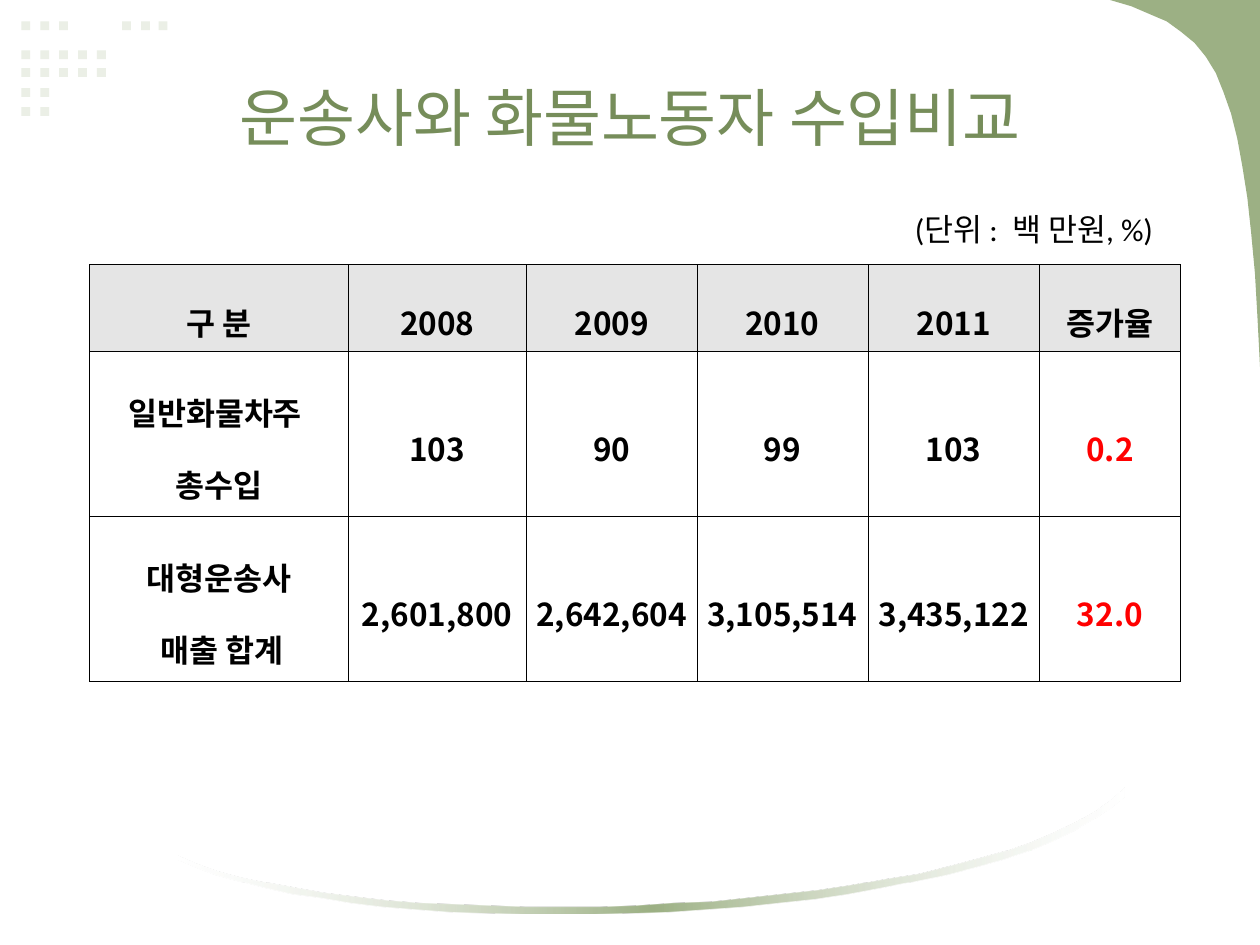
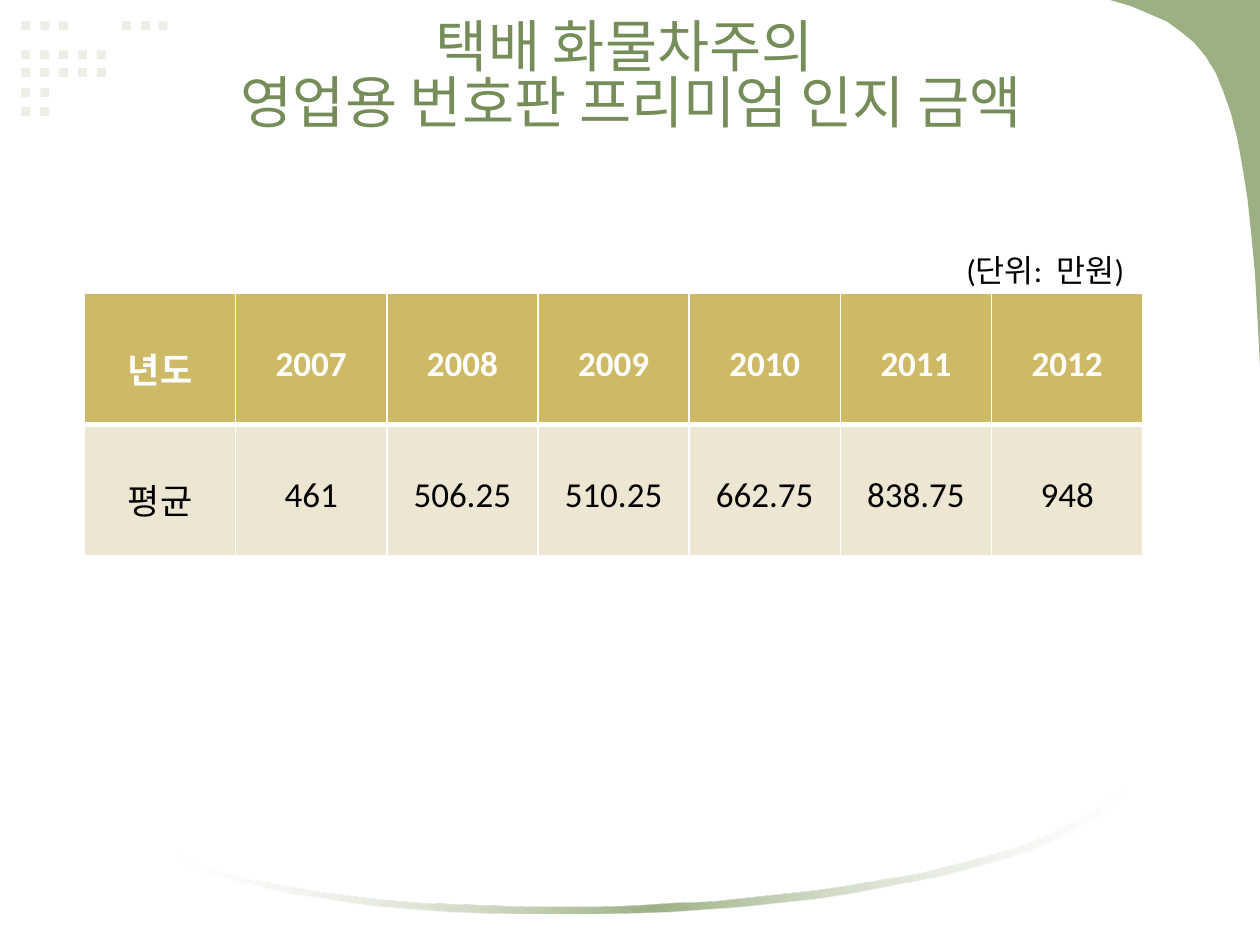
import pptx
import pptx.util
import pptx.dml.color
import pptx.enum.shapes
import pptx.enum.text
import pptx.oxml
import pptx.oxml.ns
import lxml.etree

# ---- Content ----
INCOME = {
    "title": ["운송사와 화물노동자 수입비교"],
    "title_box": (50, 30, 900, 125),
    "title_size": 36,
    "unit": "(단위 :  백 만원, %)",
    "unit_box": (642, 162, 283, 71),
    "table_at": (71, 210),
    "columns": [205, 142, 135, 136, 136, 112],
    "heights": [69, 131, 131],
    "rows": [
        ["구 분", "2008", "2009", "2010", "2011", "증가율"],
        ["일반화물차주 \n총수입", "103", "90", "99", "103", "0.2"],
        ["대형운송사\n 매출 합계", "2,601,800", "2,642,604", "3,105,514", "3,435,122", "32.0"],
    ],
}
PREMIUM = {
    "title": ["택배 화물차주의 ", "영업용 번호판 프리미엄 인지 금액"],
    "title_box": (51, 0, 900, 125),
    "title_size": 32.4,
    "unit": "(단위:  만원)",
    "unit_box": (626, 194, 276, 40),
    "table_at": (67, 233),
    "columns": [120] * 7,
    "heights": [104] * 2,
    "rows": [
        ["년도", "2007", "2008", "2009", "2010", "2011", "2012"],
        ["평균", "461", "506.25", "510.25", "662.75", "838.75", "948"],
    ],
}

# ---- Shared style ----
PX = 9144  # 100 px to the inch
HANGUL, LATIN = "Noto Sans CJK KR", "Calibri"
BLACK, WHITE, RED = "000000", "FFFFFF", "FF0000"
GREEN, TITLE_GREEN, PALE_GREEN = "9CB084", "768D5A", "EBEFE6"
GREY, GOLD, CREAM = "E5E5E5", "CEB966", "EDE6D3"

# ---- Background geometry ----
DOT = 7
DOT_COLUMNS = [17, 32, 47, 62, 77]
DOT_ROWS = {
    17: DOT_COLUMNS[:3] + [97, 112, 126],
    40: DOT_COLUMNS,
    54: DOT_COLUMNS,
    70: DOT_COLUMNS[:2],
    85: DOT_COLUMNS[:2],
}
CORNER = [
    (881, 0), (1000, 0), (1000, 291), (998, 252), (996, 217), (993, 185), (990, 157),
    (986, 132), (982, 110), (977, 90), (971, 73), (965, 58), (957, 45), (948, 34),
    (937, 25), (926, 17), (912, 11), (898, 5),
]
SWOOSH = [
    (892, 625), (892, 632), (881, 641), (867, 650), (852, 659), (835, 667), (816, 675),
    (795, 682), (773, 688), (750, 694), (725, 699), (700, 704), (673, 709), (646, 713),
    (617, 716), (589, 719), (560, 721), (531, 723), (501, 724), (472, 725), (443, 725),
    (414, 725), (385, 724), (357, 723), (330, 721), (304, 719), (279, 716), (255, 712),
    (232, 709), (210, 704), (191, 699), (172, 694), (156, 688), (142, 682), (142, 679),
    (156, 685), (173, 691), (192, 696), (212, 700), (234, 704), (257, 708), (281, 711),
    (307, 714), (333, 716), (361, 717), (389, 718), (417, 719), (446, 719), (476, 719),
    (505, 718), (534, 716), (564, 715), (593, 712), (621, 709), (649, 706), (676, 702),
    (703, 697), (729, 693), (753, 687), (776, 681), (798, 675), (818, 668), (837, 660),
    (854, 652), (868, 644), (881, 635),
]
SWOOSH_STOPS = [(0, WHITE, 30), (50, GREEN, 100), (100, WHITE, 30)]  # position, colour, opacity


def px(*lengths):
    return [pptx.util.Emu(length * PX) for length in lengths]


def rgb(color):
    return pptx.dml.color.RGBColor.from_string(color)


def parse_xml(text):
    return pptx.oxml.parse_xml(text.replace(" ", f" {pptx.oxml.ns.nsdecls('a')} ", 1))


def style(paragraph, font_name, size, color, align, bold=False):
    alignment = pptx.enum.text.PP_ALIGN
    paragraph.alignment = getattr(alignment, align)
    font = paragraph.font
    font.name, font.size, font.bold = font_name, pptx.util.Pt(size), bold
    font.color.rgb = rgb(color)
    if font_name == HANGUL:
        properties = paragraph._p.pPr.find(pptx.oxml.ns.qn("a:defRPr"))
        properties.append(parse_xml(f'<a:ea typeface="{HANGUL}"/>'))


def finish(shape, color):
    shape.shadow.inherit = False
    shape.fill.solid()
    shape.fill.fore_color.rgb = rgb(color)
    shape.line.fill.background()
    return shape


def outline(slide, points, color):
    builder = slide.shapes.build_freeform(*points[0], scale=PX)
    builder.add_line_segments(points[1:], close=True)
    return finish(builder.convert_to_shape(), color)


def draw_background(slide, layout):
    """Draw the dots, corner and swoosh, then move them to the layout."""
    rectangle = pptx.enum.shapes.MSO_SHAPE.RECTANGLE
    decorations = [
        finish(slide.shapes.add_shape(rectangle, *px(left, top, DOT, DOT)), PALE_GREEN)
        for top, lefts in DOT_ROWS.items() for left in lefts
    ]
    decorations.append(outline(slide, CORNER, GREEN))
    swoosh = outline(slide, SWOOSH, GREEN)
    swoosh.fill.gradient()
    swoosh.fill.gradient_angle = 0
    stops = next(swoosh.element.iter(pptx.oxml.ns.qn("a:gsLst")))
    for stop in list(stops):
        stops.remove(stop)
    for position, color, opacity in SWOOSH_STOPS:
        stops.append(parse_xml(
            f'<a:gs pos="{position * 1000}"><a:srgbClr val="{color}">'
            f'<a:alpha val="{opacity * 1000}"/></a:srgbClr></a:gs>'))
    decorations.append(swoosh)
    for number, shape in enumerate(decorations, 100):
        shape.element.nvSpPr.cNvPr.id = number
        layout.shapes.element.append(shape.element)


def add_heading(slide, content):
    """Fill the title and the unit note above the table."""
    title = slide.shapes.title
    title.left, title.top, title.width, title.height = px(*content["title_box"])
    frame = title.text_frame
    frame.auto_size = pptx.enum.text.MSO_AUTO_SIZE.NONE
    frame.vertical_anchor = pptx.enum.text.MSO_ANCHOR.MIDDLE
    paragraph = frame.paragraphs[0]
    for number, line in enumerate(content["title"]):
        if number:
            paragraph.add_line_break()
        paragraph.add_run().text = line
    if len(content["title"]) > 1:
        paragraph.line_spacing = 0.83
    style(paragraph, HANGUL, content["title_size"], TITLE_GREEN, "CENTER")

    unit = slide.shapes.add_textbox(*px(*content["unit_box"])).text_frame
    unit.word_wrap = True
    unit.text = content["unit"]
    style(unit.paragraphs[0], LATIN, 18, BLACK, "RIGHT")


def set_borders(cell, color, **widths):
    """Widths are points by side: L, R, T, B, in that order."""
    properties = cell._tc.get_or_add_tcPr()
    for index, (side, width) in enumerate(widths.items()):
        properties.insert(index, parse_xml(
            f'<a:ln{side} w="{round(width * 12700)}"><a:solidFill>'
            f'<a:srgbClr val="{color}"/></a:solidFill></a:ln{side}>'))


def format_income_cell(cell, row, column):
    cell.vertical_anchor = pptx.enum.text.MSO_ANCHOR.MIDDLE
    cell.margin_left, cell.margin_top, cell.margin_right, cell.margin_bottom = px(7, 2, 7, 2)
    is_growth = row > 0 and column == len(INCOME["columns"]) - 1
    for paragraph in cell.text_frame.paragraphs:
        paragraph.line_spacing = 1.6
        style(paragraph, HANGUL, 18, RED if is_growth else BLACK, "CENTER", bold=True)
    if row == 0:
        cell.fill.solid()
        cell.fill.fore_color.rgb = rgb(GREY)
    else:
        cell.fill.background()
    set_borders(cell, BLACK, L=0.28, R=0.28, T=0.28, B=0.28)


def format_premium_cell(cell, row, column):
    is_header = row == 0
    cell.margin_top = px(39)[0]
    style(cell.text_frame.paragraphs[0], LATIN, 20,
          WHITE if is_header else BLACK, "CENTER", bold=is_header)
    cell.fill.solid()
    cell.fill.fore_color.rgb = rgb(GOLD if is_header else CREAM)
    set_borders(cell, WHITE, L=1, R=1, T=1 if is_header else 3, B=3 if is_header else 1)


def add_table(slide, content, format_cell):
    rows, columns, heights = content["rows"], content["columns"], content["heights"]
    table = slide.shapes.add_table(
        len(rows), len(columns),
        *px(*content["table_at"], sum(columns), sum(heights))).table
    for column, width in zip(table.columns, px(*columns)):
        column.width = width
    for row, height in zip(table.rows, px(*heights)):
        row.height = height
    for row, values in enumerate(rows):
        for column, value in enumerate(values):
            cell = table.cell(row, column)
            cell.text = value
            format_cell(cell, row, column)


def main():
    presentation = pptx.Presentation()
    presentation.slide_width, presentation.slide_height = px(1000, 750)
    layout = presentation.slide_layouts[5]  # title only
    pages = [(INCOME, format_income_cell), (PREMIUM, format_premium_cell)]
    for number, (content, format_cell) in enumerate(pages):
        slide = presentation.slides.add_slide(layout)
        if number == 0:
            draw_background(slide, layout)
        add_heading(slide, content)
        add_table(slide, content, format_cell)
    presentation.save("out.pptx")


if __name__ == "__main__":
    main()
